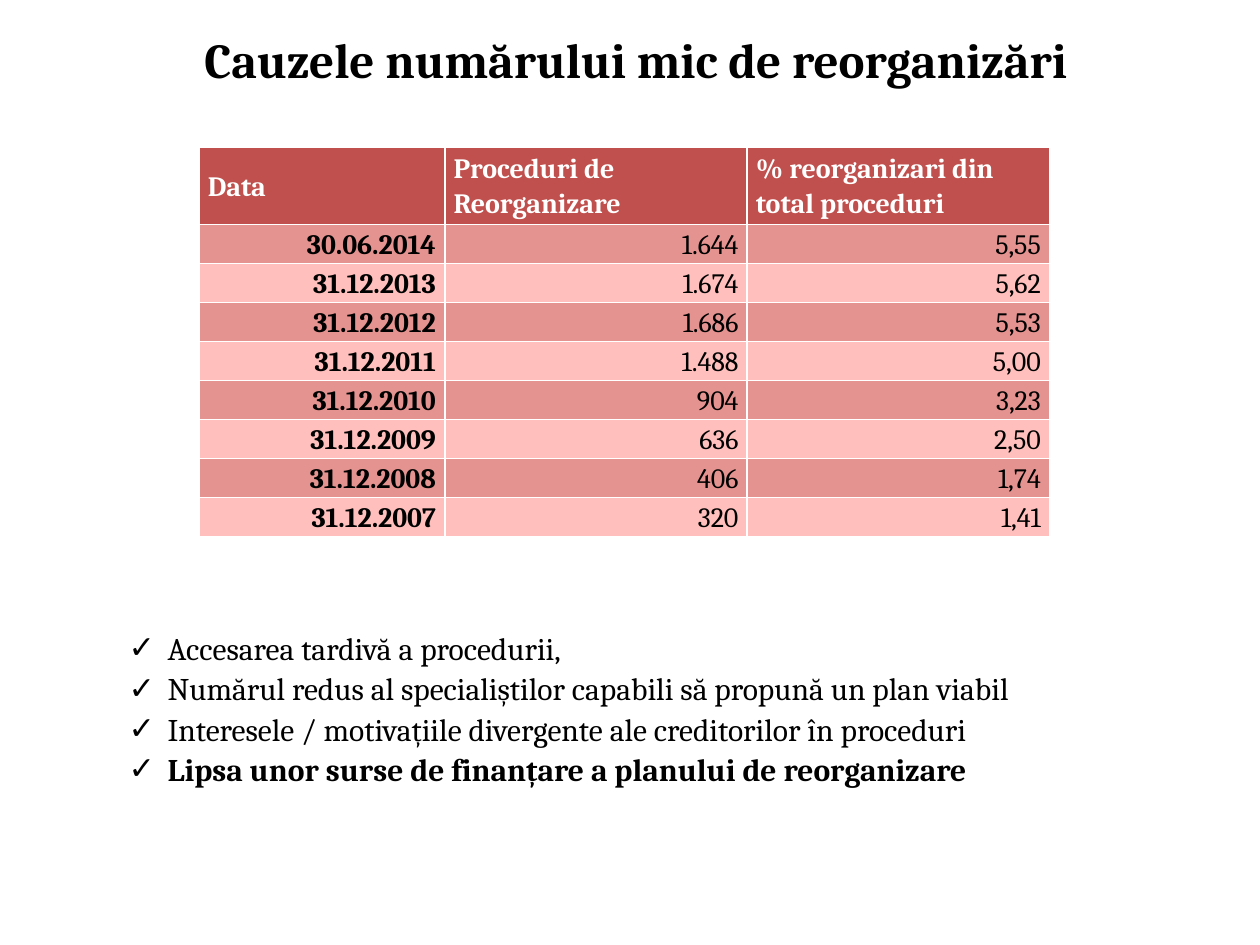
from lxml.etree import SubElement
from pptx import Presentation
from pptx.dml.color import RGBColor
from pptx.enum.text import MSO_ANCHOR, MSO_AUTO_SIZE, PP_ALIGN
from pptx.oxml.ns import qn
from pptx.util import Inches, Pt

BLACK = RGBColor(0x00, 0x00, 0x00)
WHITE = RGBColor(0xFF, 0xFF, 0xFF)
HEADER_RED = RGBColor(0xC0, 0x50, 0x4D)
DARK_BAND = RGBColor(0xE5, 0x93, 0x90)
LIGHT_BAND = RGBColor(0xFF, 0xC0, 0xBD)

TITLE = "Cauzele numărului mic de reorganizări"
HEADERS = ("Data", "Proceduri de Reorganizare", "% reorganizari din total proceduri")
PROCEDURES = (
    ("30.06.2014", "1.644", "5,55"),
    ("31.12.2013", "1.674", "5,62"),
    ("31.12.2012", "1.686", "5,53"),
    ("31.12.2011", "1.488", "5,00"),
    ("31.12.2010", "904", "3,23"),
    ("31.12.2009", "636", "2,50"),
    ("31.12.2008", "406", "1,74"),
    ("31.12.2007", "320", "1,41"),
)
CAUSES = (
    "Accesarea tardivă a procedurii,",
    "Numărul redus al specialiștilor capabili să propună un plan viabil",
    "Interesele / motivațiile divergente ale creditorilor în proceduri",
    "Lipsa unor surse de finanțare a planului de reorganizare",
)


def set_all(target, values):
    """Set each attribute of the target from a dict."""
    for name, value in values.items():
        setattr(target, name, value)


def place(shape, box):
    """Move a shape to a box of left, top, width and height in inches."""
    set_all(shape, dict(zip(("left", "top", "width", "height"), map(Inches, box))))


def write(paragraph, text, size, color=BLACK, bold=False):
    """Add a formatted run to a paragraph."""
    run = paragraph.add_run()
    run.text = text
    set_all(run.font, {"name": "Cambria", "size": Pt(size), "bold": bold})
    run.font.color.rgb = color


def add_borders(cell):
    """Draw thin white lines on the four sides of a cell."""
    properties = cell._tc.get_or_add_tcPr()
    for side in ("a:lnL", "a:lnR", "a:lnT", "a:lnB"):
        line = SubElement(properties, qn(side), w=str(Pt(1)))
        fill = SubElement(line, qn("a:solidFill"))
        SubElement(fill, qn("a:srgbClr"), val=str(WHITE))


def fill_cell(cell, text, fill, color, bold, alignment):
    """Write and format one table cell."""
    set_all(cell, {
        "margin_left": Inches(0.07), "margin_right": Inches(0.07),
        "margin_top": 0, "margin_bottom": 0,
        "vertical_anchor": MSO_ANCHOR.MIDDLE,
    })
    add_borders(cell)
    cell.fill.solid()
    cell.fill.fore_color.rgb = fill
    paragraph = cell.text_frame.paragraphs[0]
    set_all(paragraph, {"alignment": alignment, "line_spacing": 1.07})
    write(paragraph, text, 16, color, bold)


def build_title(title, box):
    """Place the centred slide title."""
    place(title, box)
    set_all(title.text_frame, {"word_wrap": True, "auto_size": MSO_AUTO_SIZE.NONE})
    paragraph = title.text_frame.paragraphs[0]
    paragraph.alignment = PP_ALIGN.CENTER
    write(paragraph, TITLE, 28, bold=True)


def build_table(slide, box):
    """Add the banded table of reorganisation procedures."""
    frame = slide.shapes.add_table(len(PROCEDURES) + 1, len(HEADERS), *map(Inches, box))
    table = frame.table
    set_all(table, {"first_row": False, "horz_banding": False})
    for column, width in zip(table.columns, (1.95, 2.4, 2.4)):
        column.width = Inches(width)
    for index, row in enumerate(table.rows):
        row.height = Inches(0.31 if index else 0.61)
    for column, header in enumerate(HEADERS):
        fill_cell(table.cell(0, column), header, HEADER_RED, WHITE, True, PP_ALIGN.LEFT)
    for row, values in enumerate(PROCEDURES, 1):
        band = DARK_BAND if row % 2 else LIGHT_BAND
        for column, value in enumerate(values):
            fill_cell(table.cell(row, column), value, band, BLACK, column == 0, PP_ALIGN.RIGHT)


def build_causes(body, box):
    """Place the check-marked list of causes, the last one in bold."""
    place(body, box)
    frame = body.text_frame
    set_all(frame, {"word_wrap": True, "auto_size": MSO_AUTO_SIZE.NONE})
    for index, cause in enumerate(CAUSES):
        paragraph = frame.add_paragraph() if index else frame.paragraphs[0]
        properties = paragraph._p.get_or_add_pPr()
        properties.set("marL", str(Inches(0.31)))
        properties.set("indent", str(-Inches(0.31)))
        SubElement(properties, qn("a:buChar"), char="✓")
        set_all(paragraph, {"line_spacing": 1.07, "space_before": Pt(0)})
        write(paragraph, cause, 18, bold=cause == CAUSES[-1])


def main():
    """Build and save the slide."""
    presentation = Presentation()
    set_all(presentation, {"slide_width": Inches(10), "slide_height": Inches(7.5)})
    slide = presentation.slides.add_slide(presentation.slide_layouts[1])
    build_title(slide.shapes.title, (0.76, 0.18, 8.57, 0.57))
    build_table(slide, (1.58, 1.17, 6.75, 3.09))
    build_causes(slide.placeholders[1], (0.92, 4.92, 8.08, 1.4))
    presentation.save("out.pptx")


if __name__ == "__main__":
    main()
